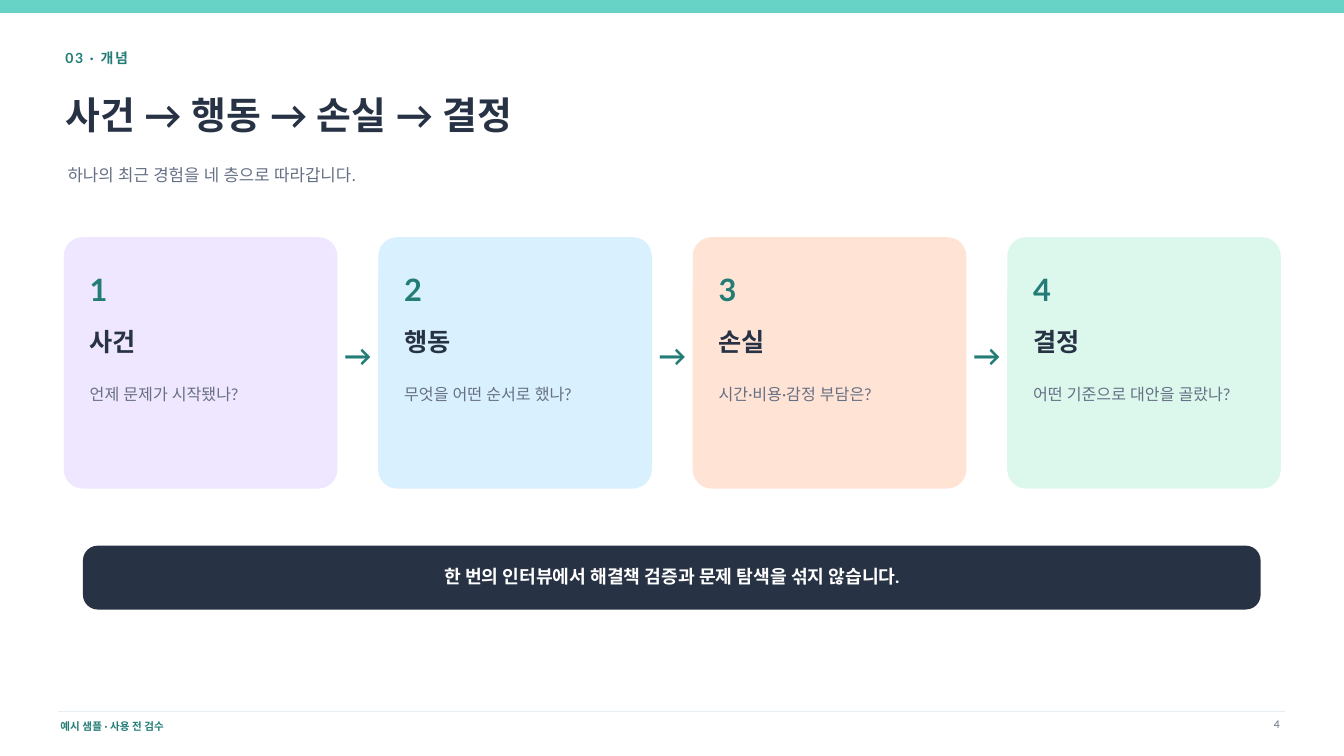
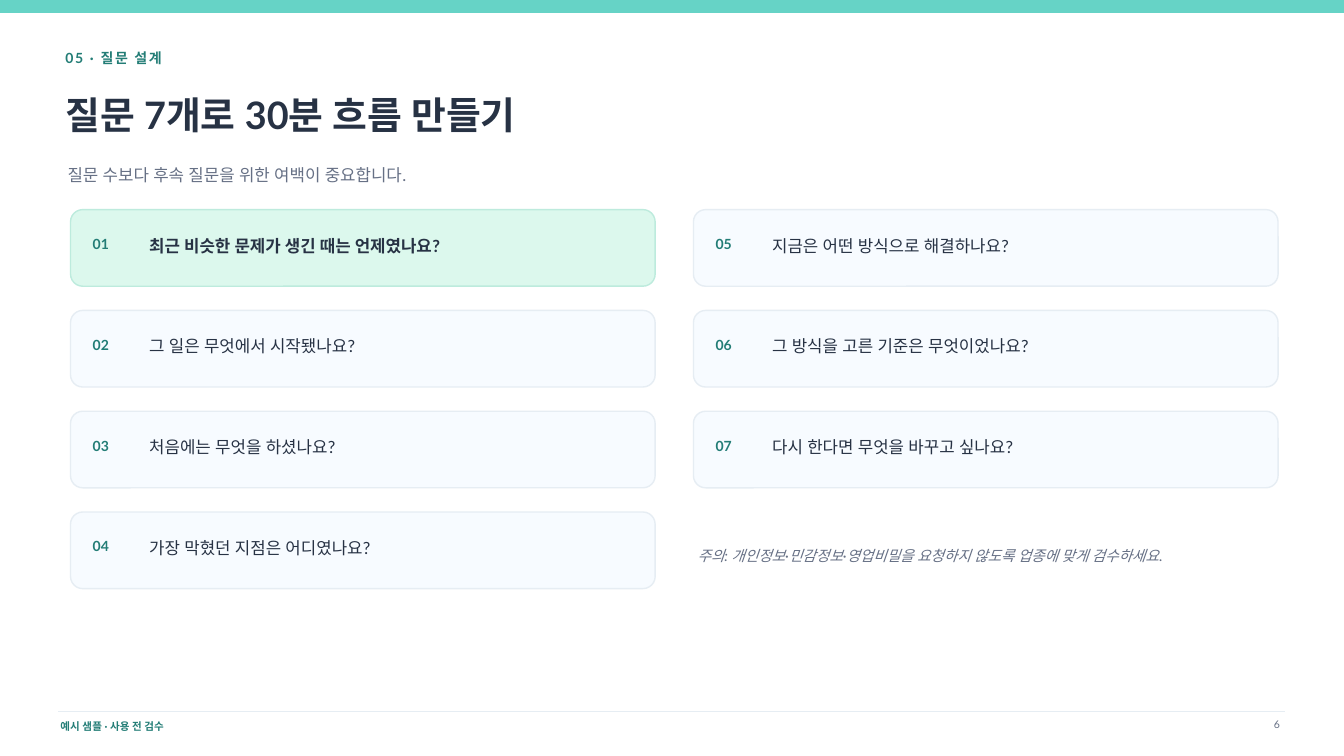
from lxml import etree
from pptx import Presentation
from pptx.dml.color import RGBColor
from pptx.enum.shapes import MSO_CONNECTOR, MSO_SHAPE
from pptx.enum.text import MSO_ANCHOR, PP_ALIGN
from pptx.oxml.ns import qn
from pptx.util import Pt

RECTANGLE = MSO_SHAPE.RECTANGLE
ROUNDED = MSO_SHAPE.ROUNDED_RECTANGLE
STRAIGHT = MSO_CONNECTOR.STRAIGHT
LEFT, CENTER, RIGHT = PP_ALIGN.LEFT, PP_ALIGN.CENTER, PP_ALIGN.RIGHT
TOP, MIDDLE = MSO_ANCHOR.TOP, MSO_ANCHOR.MIDDLE


def color(hex_string):
    return RGBColor.from_string(hex_string)


class Deck:
    FONT = "Lato"
    MINT = "66D3C6"
    TEAL = "237D76"
    NAVY = "273244"
    GRAY = "667085"
    RULE = "E6EDF3"
    WHITE = "FFFFFF"
    PALE = "F7FBFF"
    LILAC = "EFE6FF"
    SKY = "D9F0FF"
    PEACH = "FFE3D5"
    GREEN = "DCF8ED"
    GREEN_EDGE = "BDEBDD"

    def __init__(self):
        self.presentation = Presentation()
        self.presentation.slide_width = Pt(960)
        self.presentation.slide_height = Pt(540)
        self.slide = None

    def set_text(self, shape, text, size, ink, bold=False, italic=False,
                 align=LEFT, anchor=MIDDLE, spacing=0):
        frame = shape.text_frame
        frame.word_wrap = True
        frame.margin_left = frame.margin_right = 0
        frame.margin_top = frame.margin_bottom = 0
        frame.vertical_anchor = anchor
        frame.text = text
        paragraph = frame.paragraphs[0]
        paragraph.alignment = align
        run = paragraph.runs[0]
        run.font.name = self.FONT
        run.font.size = Pt(size)
        run.font.bold = bold
        run.font.italic = italic
        run.font.color.rgb = color(ink)
        properties = run._r.get_or_add_rPr()
        for script in ("a:ea", "a:cs"):
            etree.SubElement(properties, qn(script)).set("typeface", self.FONT)
        if spacing:
            properties.set("spc", str(round(spacing * 100)))

    def text(self, left, top, width, height, text, size, ink, **style):
        box = self.slide.shapes.add_textbox(Pt(left), Pt(top), Pt(width), Pt(height))
        self.set_text(box, text, size, ink, **style)

    def panel(self, left, top, width, height, fill, edge=None, radius=0):
        shape = self.slide.shapes.add_shape(
            ROUNDED if radius else RECTANGLE, Pt(left), Pt(top), Pt(width), Pt(height))
        if radius:
            shape.adjustments[0] = radius / min(width, height)
        shape.shadow.inherit = False
        shape.fill.solid()
        shape.fill.fore_color.rgb = color(fill)
        shape.line.color.rgb = color(edge or fill)
        shape.line.width = Pt(1)
        return shape

    def rule(self, left, right, top):
        line = self.slide.shapes.add_connector(STRAIGHT, Pt(left), Pt(top), Pt(right), Pt(top))
        line.line.color.rgb = color(self.RULE)
        line.line.width = Pt(1)
        etree.SubElement(line._element.spPr, qn("a:effectLst"))

    def new_slide(self, section, title, subtitle, page):
        self.slide = self.presentation.slides.add_slide(self.presentation.slide_layouts[6])
        self.slide.background.fill.solid()
        self.slide.background.fill.fore_color.rgb = color(self.WHITE)
        self.panel(0, 0, 960, 8.64, self.MINT)
        self.rule(41.76, 918, 508.32)
        self.text(43.2, 512.64, 302.4, 12.96, "예시 샘플 · 사용 전 검수", 7.5, self.TEAL, bold=True)
        self.text(878.4, 512.64, 36, 12.96, str(page), 7.5, self.GRAY, align=RIGHT, anchor=TOP)
        self.text(46.8, 30.96, 352.8, 20.16, section, 10, self.TEAL, bold=True, spacing=1.2)
        self.text(46.8, 59.04, 864, 44.64, title, 27, self.NAVY, bold=True)
        self.text(48.24, 109.44, 849.6, 30.24, subtitle, 12, self.GRAY)

    def step_card(self, left, number, title, question, fill):
        self.panel(left, 169.92, 194.4, 178.56, fill, radius=13)
        inner = left + 18
        self.text(inner, 190.08, 36, 32.4, str(number), 22, self.TEAL, bold=True)
        self.text(inner, 233.28, 151.2, 21.6, title, 18, self.NAVY, bold=True)
        self.text(inner, 274.32, 154.8, 53.28, question, 11.5, self.GRAY, anchor=TOP)

    def step_arrow(self, left):
        self.text(left, 241.2, 23.04, 25.2, "→", 20, self.TEAL, bold=True, align=CENTER)

    def banner(self, message):
        shape = self.panel(59.76, 390.24, 840.24, 44.64, self.NAVY, radius=10.1)
        self.set_text(shape, message, 13, self.WHITE, bold=True, align=CENTER)
        shape.text_frame.margin_bottom = Pt(2)

    def question_card(self, left, top, number, question, highlighted):
        fill, edge = (self.GREEN, self.GREEN_EDGE) if highlighted else (self.PALE, self.RULE)
        self.panel(left, top, 417.6, 54.72, fill, edge, radius=8.65)
        self.text(left + 15.84, top + 16.56, 28.8, 15.84, f"{number:02d}", 10, self.TEAL, bold=True)
        self.text(left + 56.16, top + 10.08, 336.96, 30.96, question, 12, self.NAVY,
                  bold=highlighted)


def concept_slide(deck):
    deck.new_slide("03 · 개념", "사건 → 행동 → 손실 → 결정",
                   "하나의 최근 경험을 네 층으로 따라갑니다.", 4)
    steps = [
        ("사건", "언제 문제가 시작됐나?", deck.LILAC),
        ("행동", "무엇을 어떤 순서로 했나?", deck.SKY),
        ("손실", "시간·비용·감정 부담은?", deck.PEACH),
        ("결정", "어떤 기준으로 대안을 골랐나?", deck.GREEN),
    ]
    for index, (title, question, fill) in enumerate(steps):
        left = 46.08 + index * 224.64
        deck.step_card(left, index + 1, title, question, fill)
        if index < len(steps) - 1:
            deck.step_arrow(left + 198)
    deck.banner("한 번의 인터뷰에서 해결책 검증과 문제 탐색을 섞지 않습니다.")


def question_slide(deck):
    deck.new_slide("05 · 질문 설계", "질문 7개로 30분 흐름 만들기",
                   "질문 수보다 후속 질문을 위한 여백이 중요합니다.", 6)
    questions = [
        "최근 비슷한 문제가 생긴 때는 언제였나요?",
        "그 일은 무엇에서 시작됐나요?",
        "처음에는 무엇을 하셨나요?",
        "가장 막혔던 지점은 어디였나요?",
        "지금은 어떤 방식으로 해결하나요?",
        "그 방식을 고른 기준은 무엇이었나요?",
        "다시 한다면 무엇을 바꾸고 싶나요?",
    ]
    for index, question in enumerate(questions):
        column, row = divmod(index, 4)
        deck.question_card(50.4 + column * 444.96, 149.76 + row * 72,
                           index + 1, question, index == 0)
    deck.text(498.24, 380.16, 394.56, 33.84,
              "주의: 개인정보·민감정보·영업비밀을 요청하지 않도록 업종에 맞게 검수하세요.",
              10.5, deck.GRAY, italic=True)


def main():
    deck = Deck()
    concept_slide(deck)
    question_slide(deck)
    deck.presentation.save("out.pptx")


if __name__ == "__main__":
    main()
